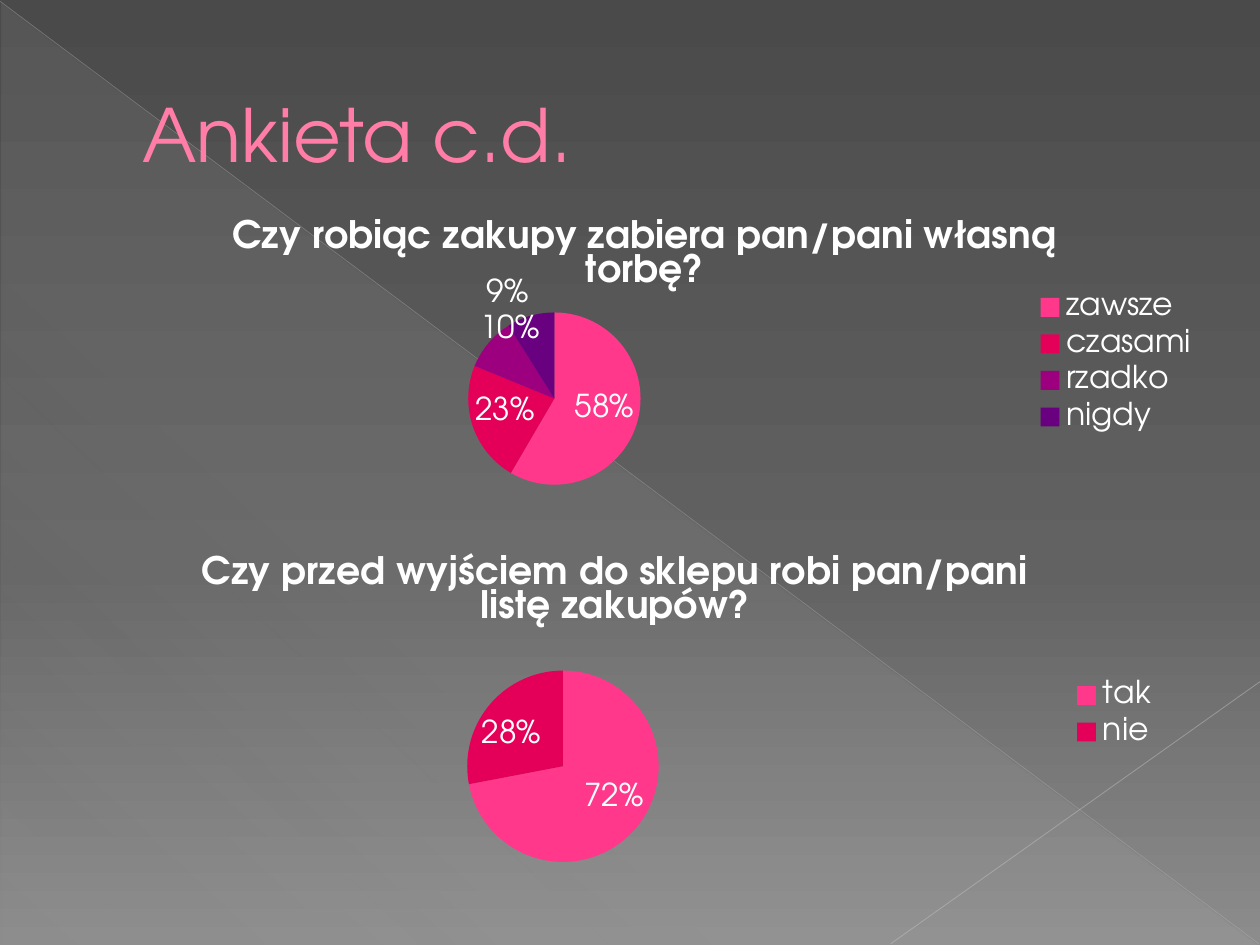
from lxml.etree import SubElement
from pptx import Presentation
from pptx.chart.data import CategoryChartData
from pptx.dml.color import RGBColor
from pptx.enum.chart import XL_CHART_TYPE, XL_LABEL_POSITION, XL_LEGEND_POSITION
from pptx.enum.shapes import MSO_CONNECTOR, MSO_SHAPE
from pptx.enum.text import MSO_ANCHOR, PP_ALIGN
from pptx.oxml.ns import qn
from pptx.util import Inches, Pt

FONT = "TeX Gyre Adventor"
WHITE = RGBColor(0xFF, 0xFF, 0xFF)
TITLE_PINK = RGBColor(0xFF, 0x7D, 0xA7)
TITLE_OUTLINE = RGBColor(0xB1, 0x27, 0x61)
DARK_GREY = RGBColor(0x4A, 0x4A, 0x4A)
MIDDLE_GREY = RGBColor(0x62, 0x62, 0x62)
LIGHT_GREY = RGBColor(0x8C, 0x8C, 0x8C)
PALE_GREY = RGBColor(0xD2, 0xD2, 0xD2)
DIAGONAL_GREY = RGBColor(0xBF, 0xBF, 0xBF)
CORNER_GREY = RGBColor(0xC6, 0xC6, 0xC6)
SLICE_COLORS = [
    RGBColor(0xFF, 0x38, 0x8C),
    RGBColor(0xE4, 0x00, 0x59),
    RGBColor(0x9C, 0x00, 0x7F),
    RGBColor(0x68, 0x00, 0x7F),
]


class SurveySlide:
    """Holds the survey style and the slide that is being filled."""

    def __init__(self, presentation):
        self.slide = presentation.slides.add_slide(presentation.slide_layouts[5])

    def set_gradient(self, fill, owner, stops, angle):
        fill.gradient()
        gradient = next(owner.iter(qn("a:gradFill")))
        stop_list = gradient.find(qn("a:gsLst"))
        for stop in list(stop_list):
            stop_list.remove(stop)
        for position, color, opacity in stops:
            stop = SubElement(stop_list, qn("a:gs"), pos=str(position * 1000))
            self.add_color(stop, color, opacity)
        gradient.find(qn("a:lin")).set("ang", str(angle * 60000))

    def add_color(self, parent, color, opacity=100):
        element = SubElement(parent, qn("a:srgbClr"), val=str(color))
        if opacity < 100:
            SubElement(element, qn("a:alpha"), val=str(opacity * 1000))

    def set_background(self, stops):
        fill = self.slide.background.fill
        self.set_gradient(fill, self.slide.element, stops, 90)

    def add_triangle(self, left, top, width, height, stops):
        shape = self.slide.shapes.add_shape(
            MSO_SHAPE.RIGHT_TRIANGLE, Inches(left), Inches(top), Inches(width), Inches(height)
        )
        shape.shadow.inherit = False
        shape.line.fill.background()
        self.set_gradient(shape.fill, shape.element, stops, 133)

    def add_line(self, start, end, color, width, opacity):
        points = [Inches(value) for value in (*start, *end)]
        connector = self.slide.shapes.add_connector(MSO_CONNECTOR.STRAIGHT, *points)
        connector.line.width = Pt(width)
        connector.line.color.rgb = color
        color_element = next(connector.element.spPr.iter(qn("a:srgbClr")))
        SubElement(color_element, qn("a:alpha"), val=str(opacity * 1000))
        SubElement(connector.element.spPr, qn("a:effectLst"))

    def add_title(self, text):
        title = self.slide.shapes.title
        title.left, title.top = Inches(0.5), Inches(0.29)
        title.width, title.height = Inches(9), Inches(1.53)
        frame = title.text_frame
        frame.text = text
        frame.vertical_anchor = MSO_ANCHOR.MIDDLE
        paragraph = frame.paragraphs[0]
        paragraph.alignment = PP_ALIGN.LEFT
        properties = paragraph._p.get_or_add_pPr()
        properties.set("marL", str(Inches(0.53)))
        properties.set("indent", "0")
        font = paragraph.runs[0].font
        font.name, font.size = FONT, Pt(42)
        font.color.rgb = TITLE_PINK
        run_properties = paragraph.runs[0]._r.get_or_add_rPr()
        outline = SubElement(run_properties, qn("a:ln"), w=str(Pt(0.5)))
        self.add_color(SubElement(outline, qn("a:solidFill")), TITLE_OUTLINE)
        run_properties.insert(0, outline)
        self.slide.shapes._spTree.append(title.element)

    def style_font(self, font, size, bold=False):
        font.name, font.size, font.bold = FONT, Pt(size), bold
        font.color.rgb = WHITE

    def add_pie(self, left, top, width, height, question, series_name, answers):
        data = CategoryChartData()
        data.categories = list(answers)
        data.add_series(series_name, list(answers.values()))
        chart = self.slide.shapes.add_chart(
            XL_CHART_TYPE.PIE, Inches(left), Inches(top), Inches(width), Inches(height), data
        ).chart
        self.style_font(chart.font, 18)
        chart.has_title = True
        chart.chart_title.include_in_layout = False
        chart.chart_title.text_frame.text = question
        heading = chart.chart_title.text_frame.paragraphs[0]
        self.style_font(heading.runs[0].font, 21.6, bold=True)
        chart.has_legend = True
        chart.legend.position = XL_LEGEND_POSITION.RIGHT
        chart.legend.include_in_layout = False
        self.style_font(chart.legend.font, 18)

        plot = chart.plots[0]
        plot.vary_by_categories = True
        series = plot.series[0]
        for index, color in enumerate(SLICE_COLORS[:len(answers)]):
            fill = series.points[index].format.fill
            fill.solid()
            fill.fore_color.rgb = color
        labels = series.data_labels
        labels.show_percentage = True
        labels.show_value = False
        labels.number_format, labels.number_format_is_linked = "0%", False
        labels.position = XL_LABEL_POSITION.BEST_FIT
        self.style_font(labels.font, 18)
        return chart

    def place(self, layout, **values):
        manual = SubElement(layout, qn("c:manualLayout"))
        for name, value in values.items():
            SubElement(manual, qn(f"c:{name}"), val=str(value))

    def place_plot(self, chart, left, top, width, height):
        area = chart.plots[0]._element.getparent()
        layout = area.find(qn("c:layout"))
        if layout is None:
            layout = SubElement(area, qn("c:layout"))
            area.insert(0, layout)
        self.place(layout, layoutTarget="inner", xMode="edge", yMode="edge",
                   x=left, y=top, w=width, h=height)

    def shift_label(self, chart, index, across, down):
        label = chart.plots[0].series[0].points[index].data_label
        label.position = XL_LABEL_POSITION.BEST_FIT
        element = next(chart.plots[0]._element.iter(qn("c:dLbl")))
        for name, value in (("showVal", "0"), ("showPercent", "1"), ("showLegendKey", "0")):
            element.find(qn(f"c:{name}")).set("val", value)
        layout = SubElement(element, qn("c:layout"))
        element.insert(1, layout)
        self.place(layout, x=across, y=down)


def main():
    presentation = Presentation()
    presentation.slide_width, presentation.slide_height = Inches(10), Inches(7.5)
    survey = SurveySlide(presentation)
    survey.set_background([(0, DARK_GREY, 100), (60, MIDDLE_GREY, 100), (100, LIGHT_GREY, 100)])
    survey.add_triangle(0.01, 0.02, 9.98, 7.48,
                        [(0, PALE_GREY, 10), (70, PALE_GREY, 8), (100, PALE_GREY, 1)])
    survey.add_line((0, 0.01), (9.99, 7.49), DIAGONAL_GREY, 0.39, 35)
    survey.add_line((10, 5.41), (7.07, 7.49), CORNER_GREY, 0.47, 45)

    bag_question = "Czy robiąc zakupy zabiera pan/pani własną torbę?"
    bag_chart = survey.add_pie(0.62, 1.56, 9, 2.63, bag_question, bag_question,
                               {"zawsze": 59, "czasami": 23, "rzadko": 10, "nigdy": 9})
    survey.place_plot(bag_chart, 0.07, 0.35, 0.7, 0.52)
    survey.shift_label(bag_chart, 2, 0.05, 0.02)
    survey.add_pie(0.47, 4.22, 8.83, 2.89,
                   "Czy przed wyjściem do sklepu robi pan/pani listę zakupów?",
                   "Series 1", {"tak": 72, "nie": 28})
    survey.add_title("Ankieta c.d.")
    presentation.save("out.pptx")


if __name__ == "__main__":
    main()
